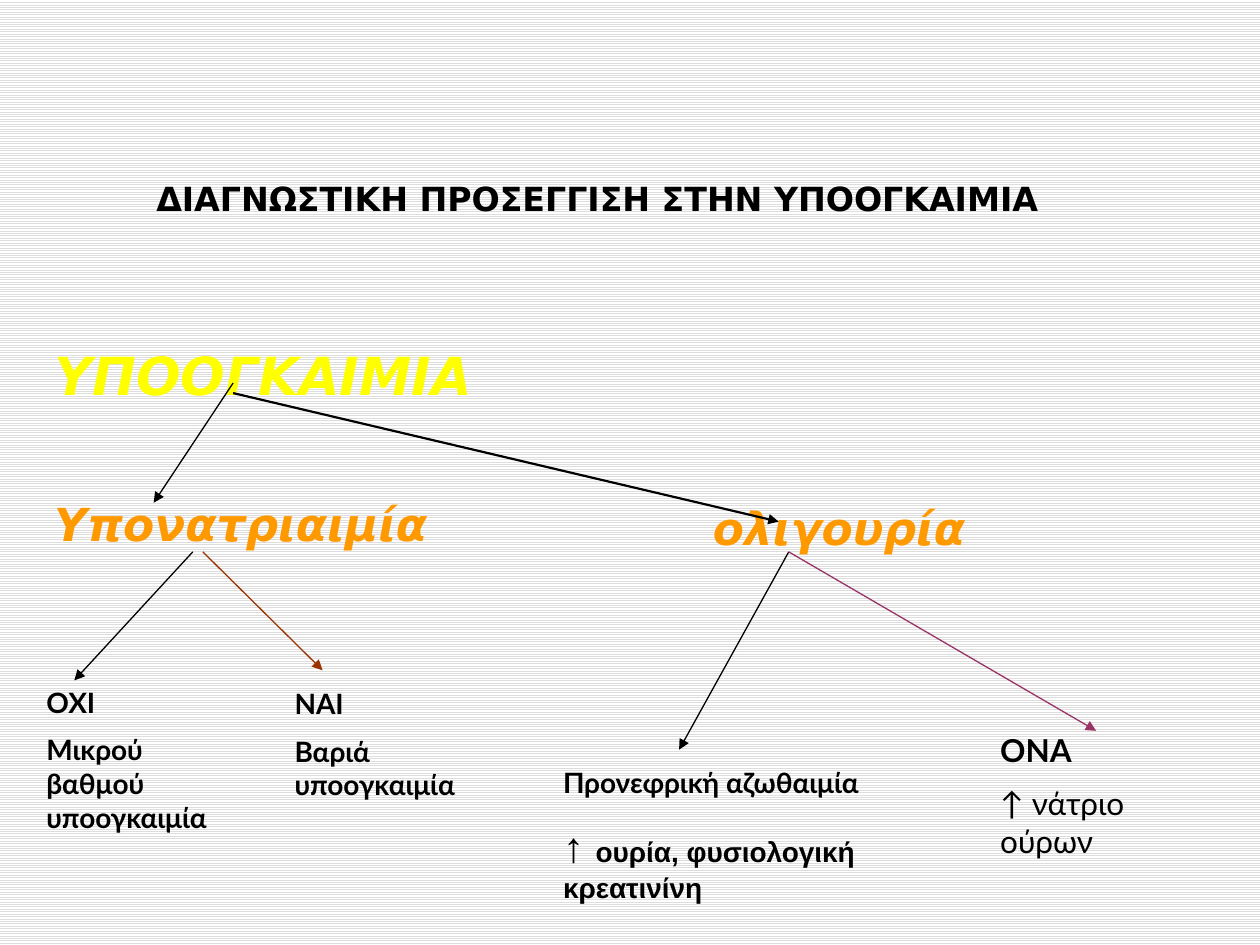
from dataclasses import dataclass

from lxml import etree
from pptx import Presentation
from pptx.dml.color import RGBColor
from pptx.enum.dml import MSO_PATTERN
from pptx.enum.shapes import MSO_CONNECTOR
from pptx.enum.text import MSO_ANCHOR, MSO_AUTO_SIZE, PP_ALIGN
from pptx.oxml.ns import qn
from pptx.util import Inches, Pt

LIGHT_HORIZONTAL = MSO_PATTERN.LIGHT_HORIZONTAL
STRAIGHT = MSO_CONNECTOR.STRAIGHT
TOP, BOTTOM = MSO_ANCHOR.TOP, MSO_ANCHOR.BOTTOM
LEFT = PP_ALIGN.LEFT
NO_AUTOFIT = MSO_AUTO_SIZE.NONE


@dataclass(frozen=True)
class Theme:
    heading_font: str = "DejaVu Sans"
    label_font: str = "Lato"
    symbol_font: str = "Arial"
    ink: str = "000000"
    stripe: str = "DDDDDD"
    paper: str = "FFFFFF"
    root: str = "FFFF00"
    branch: str = "FF9900"
    rust: str = "993300"
    plum: str = "993366"
    title_size: int = 19
    root_size: int = 30
    branch_size: int = 26
    symbol_size: int = 24
    large_label_size: int = 18
    label_size: int = 16


THEME = Theme()


@dataclass(frozen=True)
class Box:
    left: float
    top: float
    width: float
    height: float

    def place(self, shape):
        shape.left, shape.top = Inches(self.left), Inches(self.top)
        shape.width, shape.height = Inches(self.width), Inches(self.height)


@dataclass(frozen=True)
class Run:
    text: str
    size: int = THEME.label_size
    font: str = THEME.label_font
    color: str = THEME.ink
    bold: bool = True
    italic: bool = False


def branch_run(text):
    return Run(text, THEME.branch_size, THEME.heading_font, THEME.branch, italic=True)


def add_run(paragraph, content):
    run = paragraph.add_run()
    run.text = content.text
    run.font.name = content.font
    run.font.size = Pt(content.size)
    run.font.bold = content.bold
    run.font.italic = content.italic
    run.font.color.rgb = RGBColor.from_string(content.color)


def add_paragraphs(text_frame, paragraphs):
    """Fill the frame with lists of runs and return its paragraphs."""
    text_frame.word_wrap = True
    text_frame.auto_size = NO_AUTOFIT
    for index, runs in enumerate(paragraphs):
        paragraph = text_frame.paragraphs[0] if index == 0 else text_frame.add_paragraph()
        paragraph.alignment = LEFT
        for content in runs:
            add_run(paragraph, content)
    return text_frame.paragraphs


def set_background(slide):
    fill = slide.background.fill
    fill.patterned()
    fill.pattern = LIGHT_HORIZONTAL
    fill.fore_color.rgb = RGBColor.from_string(THEME.stripe)
    fill.back_color.rgb = RGBColor.from_string(THEME.paper)


def fill_title(slide, box, text):
    title = slide.shapes.title
    box.place(title)
    title.text_frame.vertical_anchor = BOTTOM
    add_paragraphs(title.text_frame, [[Run(text, THEME.title_size, THEME.heading_font)]])


def fill_tree_levels(slide, box, levels):
    """Write the root and its first branch in the body placeholder."""
    body = slide.placeholders[1]
    box.place(body)
    body.text_frame.vertical_anchor = TOP
    for paragraph in add_paragraphs(body.text_frame, levels):
        paragraph.line_spacing = 2.5
        paragraph.space_before = Pt(5)
        properties = paragraph._p.get_or_add_pPr()
        properties.set("marL", "0")
        properties.set("indent", "0")
        etree.SubElement(properties, qn("a:buNone"))


def add_arrow(slide, box, start, end, color=THEME.ink, width=0.75):
    """Draw an arrow between two points measured from the box corner."""
    points = [Inches(corner + offset) for point in (start, end)
              for corner, offset in zip((box.left, box.top), point)]
    arrow = slide.shapes.add_connector(STRAIGHT, *points)
    arrow.line.color.rgb = RGBColor.from_string(color)
    arrow.line.width = Pt(width)
    etree.SubElement(arrow.line._get_or_add_ln(), qn("a:tailEnd"), type="triangle")
    etree.SubElement(arrow._element.spPr, qn("a:effectLst"))


def add_label(slide, box, paragraphs):
    """Add a text box whose later paragraphs stand half a type size apart."""
    text_box = slide.shapes.add_textbox(0, 0, 0, 0)
    box.place(text_box)
    filled = add_paragraphs(text_box.text_frame, paragraphs)
    for paragraph, runs in zip(filled[1:], paragraphs[1:]):
        paragraph.space_before = Pt(max(run.size for run in runs) / 2)


def main():
    presentation = Presentation()
    presentation.slide_width, presentation.slide_height = Inches(10), Inches(7.5)
    slide = presentation.slides.add_slide(presentation.slide_layouts[1])
    set_background(slide)
    fill_title(slide, Box(1.14, 0.28, 8.64, 1.5), "ΔΙΑΓΝΩΣΤΙΚΗ ΠΡΟΣΕΓΓΙΣΗ ΣΤΗΝ ΥΠΟΟΓΚΑΙΜΙΑ")

    tree = Box(0.33, 1.92, 9.46, 4.79)
    fill_tree_levels(slide, tree, [
        [Run("ΥΠΟΟΓΚΑΙΜΙΑ", THEME.root_size, THEME.heading_font, THEME.root, italic=True)],
        [branch_run("Υπονατριαιμία")],
    ])
    add_label(slide, Box(5.56, 3.92, 2.6, 0.52), [[branch_run("ολιγουρία")]])

    oliguria = (5.93, 2.46)
    add_arrow(slide, tree, (1.52, 1.12), (0.89, 2.07))
    add_arrow(slide, tree, (1.52, 1.2), (5.85, 2.22), width=1.25)
    add_arrow(slide, tree, (1.2, 2.46), (0.26, 3.48))
    add_arrow(slide, tree, (1.28, 2.46), (2.23, 3.4), THEME.rust)
    add_arrow(slide, tree, oliguria, (5.06, 4.03))
    add_arrow(slide, tree, oliguria, (8.37, 3.88), THEME.plum)

    add_label(slide, Box(0.27, 5.39, 1.65, 1.3),
              [[Run("ΟΧΙ")], [Run("Μικρού βαθμού υποογκαιμία")]])
    add_label(slide, Box(2.24, 5.4, 1.73, 1.04),
              [[Run("ΝΑΙ")], [Run("Βαριά υποογκαιμία")]])
    add_label(slide, Box(4.37, 6.03, 2.99, 1.23), [
        [Run("Προνεφρική αζωθαιμία")],
        [Run("↑ ", THEME.symbol_size, THEME.symbol_font),
         Run("ουρία, φυσιολογική κρεατινίνη", font=THEME.symbol_font)],
    ])
    add_label(slide, Box(7.84, 5.75, 1.97, 1.45), [
        [Run("ΟΝΑ", THEME.large_label_size)],
        [Run("↑ νάτριο ούρων", THEME.large_label_size, bold=False)],
    ])
    presentation.save("out.pptx")


if __name__ == "__main__":
    main()
